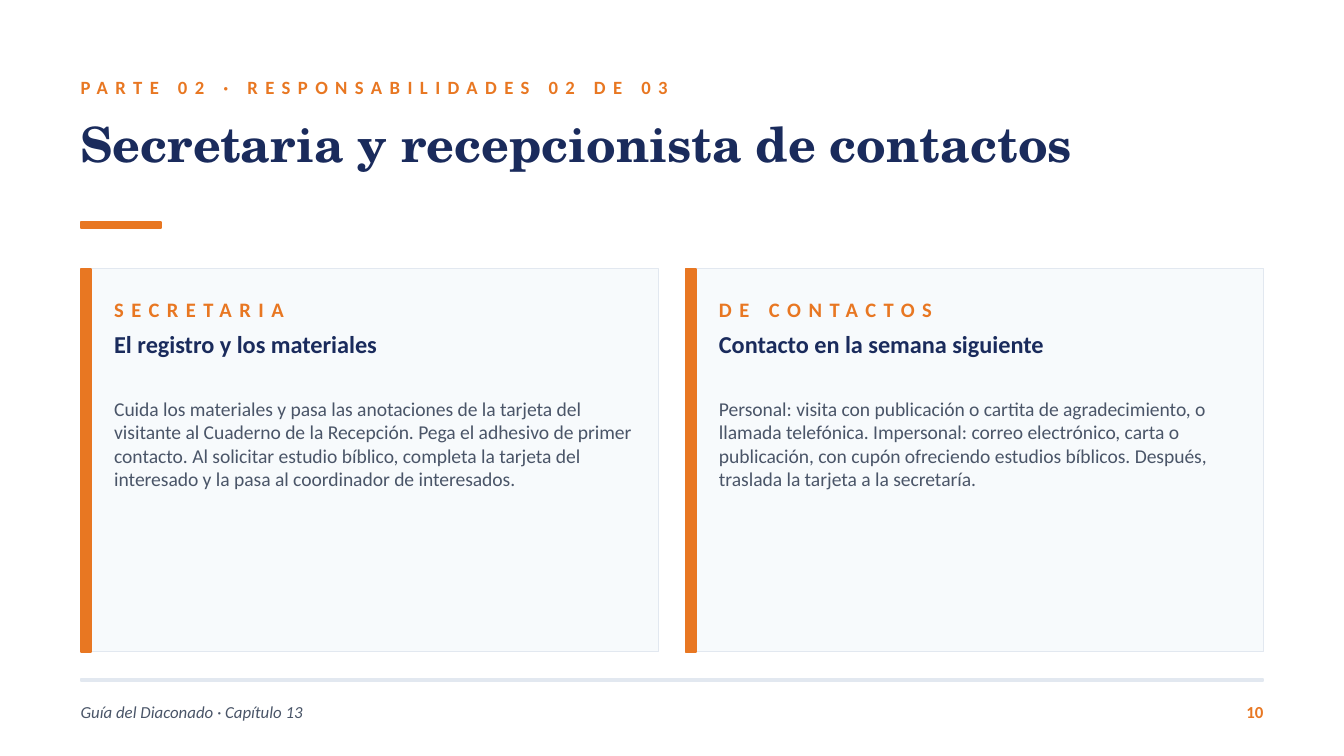
from pptx import Presentation
from pptx.dml.color import RGBColor as Rgb
from pptx.enum.shapes import MSO_SHAPE as Kind
from pptx.enum.text import MSO_ANCHOR as Anchor, PP_ALIGN as Align
from pptx.util import Pt

UNIT = 4572
ORANGE, NAVY, GRAY = "E87722", "1A2B5C", "4A5568"
PALE, RULE = "F7FAFC", "E2E8F0"
SANS, SERIF = "Calibri", "TeX Gyre Schola"
LEFT, WIDE, GAP = 120, 860, 40
CARDS = [
    ("SECRETARIA", "El registro y los materiales",
     "Cuida los materiales y pasa las anotaciones de la tarjeta del visitante "
     "al Cuaderno de la Recepción. Pega el adhesivo de primer contacto. Al "
     "solicitar estudio bíblico, completa la tarjeta del interesado y la pasa "
     "al coordinador de interesados."),
    ("DE CONTACTOS", "Contacto en la semana siguiente",
     "Personal: visita con publicación o cartita de agradecimiento, o llamada "
     "telefónica. Impersonal: correo electrónico, carta o publicación, con "
     "cupón ofreciendo estudios bíblicos. Después, traslada la tarjeta a la "
     "secretaría."),
]


def px(*nums):
    """Turn px lengths into EMU."""
    return [num * UNIT for num in nums]


def tint(code):
    """Return the colour for a hex string."""
    return Rgb.from_string(code)


def bar(slide, box, fill, line=None, width=1):
    """Draw a filled rectangle with an outline."""
    rect = slide.shapes.add_shape(Kind.RECTANGLE, *px(*box))
    rect.shadow.inherit = False
    rect.fill.solid()
    rect.fill.fore_color.rgb = tint(fill)
    rect.line.color.rgb = tint(line or fill)
    rect.line.width = Pt(width)


def label(slide, box, text, size, color, font=SANS, bold=False, slant=False,
          space=0, anchor=Anchor.TOP, align=Align.LEFT):
    """Add a text box holding one styled run."""
    frame = slide.shapes.add_textbox(*px(*box)).text_frame
    frame.word_wrap = True
    frame.vertical_anchor = anchor
    frame.margin_left = frame.margin_right = 0
    frame.margin_top = frame.margin_bottom = 0
    para = frame.paragraphs[0]
    para.alignment = align
    run = para.add_run()
    run.text = text
    run.font.name = font
    run.font.size = Pt(size)
    run.font.bold = bold
    run.font.italic = slant
    run.font.color.rgb = tint(color)
    if space:
        run.font._element.set("spc", str(space * 100))


def kicker(slide, box, text, size):
    """Add a spaced orange heading line."""
    label(slide, box, text, size, ORANGE, bold=True, space=4,
          anchor=Anchor.MIDDLE)


def card(slide, left, role, title, body):
    """Draw a panel with its accent bar and texts."""
    bar(slide, (left, 400, WIDE, 570), PALE, RULE, 0.5)
    bar(slide, (left, 400, 16, 570), ORANGE)
    inner = left + 50
    kicker(slide, (inner, 430, 800, 60), role, 11)
    label(slide, (inner, 490, 800, 80), title, 13, NAVY, bold=True)
    label(slide, (inner, 590, 800, 370), body, 10.5, GRAY)


def header(slide):
    """Add the section line, title and accent."""
    kicker(slide, (LEFT, 100, 1400, 60),
           "PARTE 02 · RESPONSABILIDADES 02 DE 03", 10)
    label(slide, (LEFT, 170, 1800, 140),
          "Secretaria y recepcionista de contactos", 26, NAVY, SERIF, bold=True)
    bar(slide, (LEFT, 330, 120, 10), ORANGE)


def footer(slide):
    """Add the rule, guide name and page number."""
    bar(slide, (LEFT, 1010, 2 * WIDE + GAP, 4), RULE)
    label(slide, (LEFT, 1030, 1200, 60), "Guía del Diaconado · Capítulo 13",
          9, GRAY, slant=True, anchor=Anchor.MIDDLE)
    label(slide, (1780, 1030, 100, 60), "10", 9, ORANGE, bold=True,
          anchor=Anchor.MIDDLE, align=Align.RIGHT)


def main():
    """Build and save the slide."""
    deck = Presentation()
    deck.slide_width, deck.slide_height = px(2000, 1125)
    slide = deck.slides.add_slide(deck.slide_layouts[6])
    header(slide)
    for num, texts in enumerate(CARDS):
        card(slide, LEFT + num * (WIDE + GAP), *texts)
    footer(slide)
    deck.save("out.pptx")


if __name__ == "__main__":
    main()
